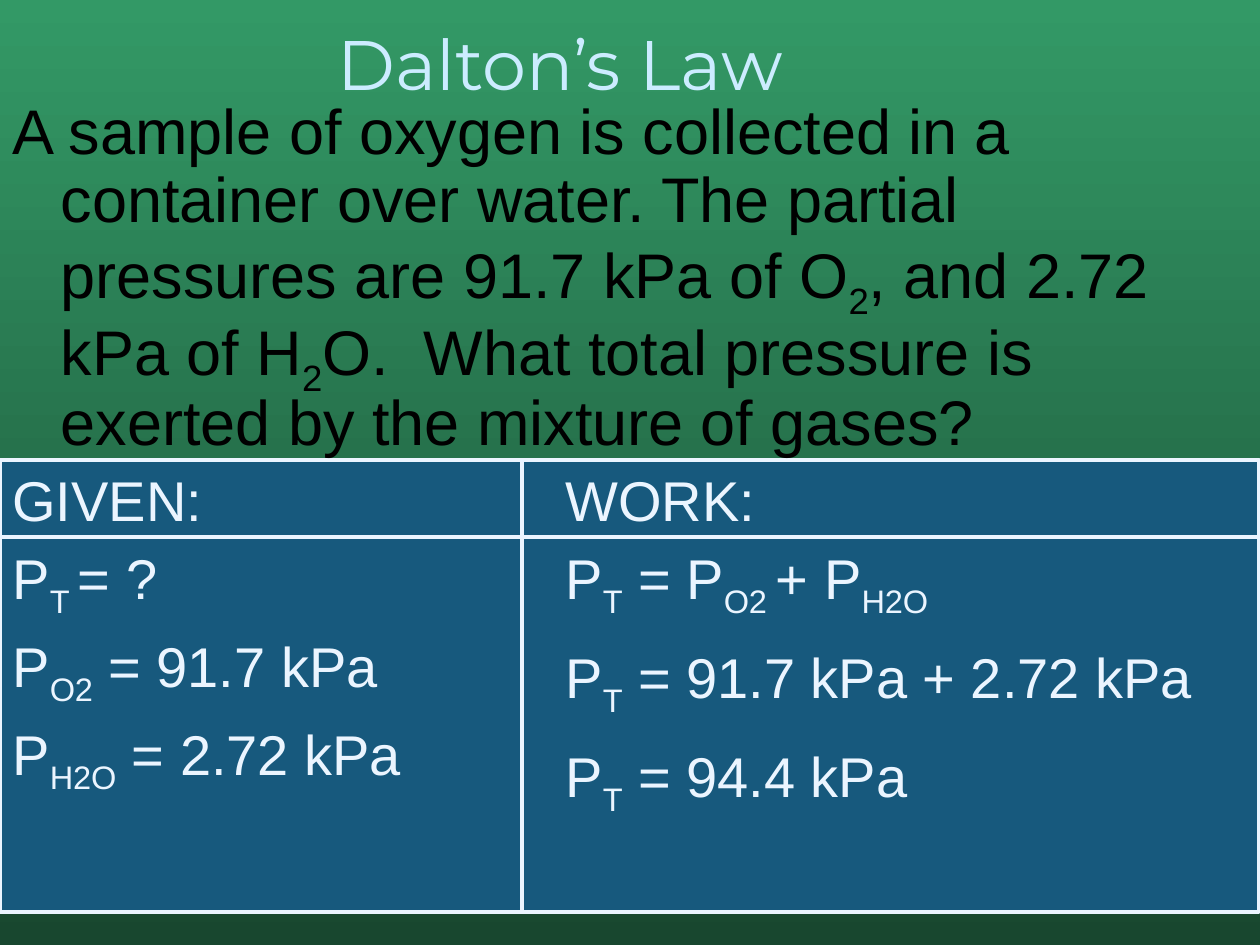
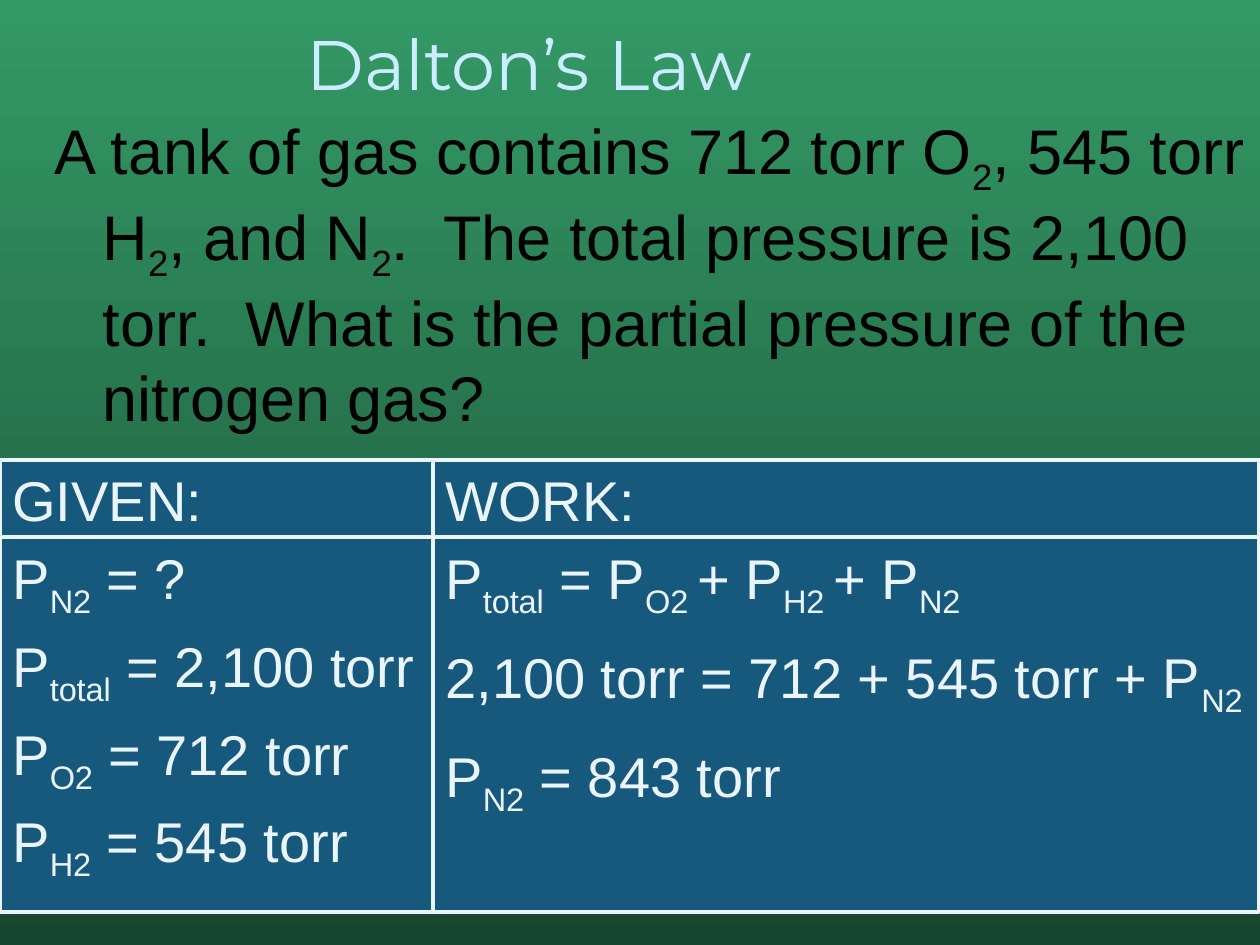
from dataclasses import dataclass

from lxml import etree
from pptx import Presentation
from pptx import util as u
from pptx.dml.color import RGBColor
from pptx.enum import shapes, text
from pptx.oxml import ns

PX = 914400 / 126


@dataclass(frozen=True)
class Theme:
    sky_top: str = "339966"
    sky_bottom: str = "18472F"
    panel: str = "17597D"
    ice: str = "EBF5FF"
    title: str = "CCECFF"
    question: str = "000000"
    heading_font: str = "Montserrat"
    text_font: str = "Arial"
    title_size: int = 40
    question_size: int = 36
    work_size: int = 32
    rule_width: float = 2.25


theme = Theme()


def px(*lengths):
    """Turn pixel lengths into a list of EMU."""
    return [u.Emu(round(length * PX)) for length in lengths]


def write(frame, lines, *, size, color, font=theme.text_font, before=(0,),
          spacing=None, hanging=0, anchor=text.MSO_ANCHOR.TOP):
    """Fill a frame; every second part between bars is a subscript.

    The last percentage in before holds for all remaining lines.
    """
    frame.word_wrap = True
    frame.auto_size = text.MSO_AUTO_SIZE.NONE
    frame.vertical_anchor = anchor
    for index, line in enumerate(lines):
        paragraph = frame.add_paragraph() if index else frame.paragraphs[0]
        paragraph.alignment = text.PP_ALIGN.LEFT
        if spacing:
            paragraph.line_spacing = spacing
        properties = paragraph._p.get_or_add_pPr()
        indent, = px(hanging)
        properties.set("marL", str(indent))
        properties.set("indent", str(-indent))
        space = etree.SubElement(properties, ns.qn("a:spcBef"))
        percent = before[min(index, len(before) - 1)]
        etree.SubElement(space, ns.qn("a:spcPct")).set("val", str(percent * 1000))
        etree.SubElement(properties, ns.qn("a:buNone"))
        for part_index, part in enumerate(line.split("|")):
            if not part:
                continue
            run = paragraph.add_run()
            run.text = part
            run.font.name = font
            run.font.size = u.Pt(size)
            run.font.color.rgb = RGBColor.from_string(color)
            if part_index % 2:
                run.font._element.set("baseline", "-25000")


problems = [
    {
        "title_left": 325,
        "question_box": (0, 94, 1239, 336),
        "question_spacing": 0.9,
        "question": "A sample of oxygen is collected in a container over water. "
                    "The partial pressures are 91.7 kPa of O|2|, and 2.72 kPa of H|2|O.  "
                    "What total pressure is exerted by the mixture of gases?",
        "divider": 522,
        "work_left": 553,
        "given": ["GIVEN:", "P|T |= ?", "P|O2| = 91.7 kPa", "P|H2O| = 2.72 kPa"],
        "work": ["WORK:", "P|T| = P|O2 |+ P|H2O|", "P|T| = 91.7 kPa + 2.72 kPa",
                 "P|T| = 94.4 kPa"],
    },
    {
        "title_left": 294,
        "question_box": (42, 105, 1218, 291),
        "question_spacing": None,
        "question": "A tank of gas contains 712 torr O|2|, 545 torr H|2|, and N|2|.  "
                    "The total pressure is 2,100 torr.  "
                    "What is the partial pressure of the nitrogen gas?",
        "divider": 433,
        "work_left": 433,
        "given": ["GIVEN:", "P|N2| = ?", "P|total| = 2,100 torr", "P|O2| = 712 torr",
                  "P|H2| = 545 torr"],
        "work": ["WORK:", "P|total| = P|O2 |+ P|H2 |+ P|N2|",
                 "2,100 torr = 712 + 545 torr + P|N2|", "P|N2| = 843 torr"],
    },
]

SLIDE_WIDTH, SLIDE_HEIGHT = 1260, 945
PANEL_TOP, PANEL_BOTTOM, HEADER_BOTTOM = 460, 912, 537
TEXT_TOP = 459

presentation = Presentation()
presentation.slide_width, presentation.slide_height = px(SLIDE_WIDTH, SLIDE_HEIGHT)

sky = presentation.slide_master.background.fill
sky.gradient()
sky.gradient_angle = 270
for stop, position, color in zip(sky.gradient_stops, (0, 1),
                                 (theme.sky_top, theme.sky_bottom)):
    stop.position = position
    stop.color.rgb = RGBColor.from_string(color)

for problem in problems:
    slide = presentation.slides.add_slide(presentation.slide_layouts[1])

    panel = slide.shapes.add_shape(
        shapes.MSO_SHAPE.RECTANGLE,
        *px(0, PANEL_TOP, SLIDE_WIDTH - 1, PANEL_BOTTOM - PANEL_TOP))
    panel.shadow.inherit = False
    panel.fill.solid()
    panel.fill.fore_color.rgb = RGBColor.from_string(theme.panel)
    panel.line.color.rgb = RGBColor.from_string(theme.ice)
    panel.line.width = u.Pt(theme.rule_width)

    columns = [
        (problem["given"], (0, TEXT_TOP, 520, 486), (20,)),
        (problem["work"], (problem["work_left"], TEXT_TOP,
                           SLIDE_WIDTH - problem["work_left"], 459), (20, 20, 40)),
    ]
    for lines, box, before in columns:
        column = slide.shapes.add_textbox(*px(*box))
        write(column.text_frame, lines, size=theme.work_size, color=theme.ice,
              before=before)

    title = slide.shapes.title
    title.left, title.top, title.width, title.height = px(problem["title_left"], 0, 998, 126)
    write(title.text_frame, ["Dalton’s Law"], size=theme.title_size, color=theme.title,
          font=theme.heading_font, anchor=text.MSO_ANCHOR.MIDDLE)

    question = slide.placeholders[1]
    question.left, question.top, question.width, question.height = px(*problem["question_box"])
    write(question.text_frame, [problem["question"]], size=theme.question_size,
          color=theme.question, before=(100,), spacing=problem["question_spacing"],
          hanging=48)
    # Descenders of the question lie over the panel's edge
    slide.shapes._spTree.append(question._element)

    rules = [
        (problem["divider"], PANEL_TOP, problem["divider"], PANEL_BOTTOM),
        (0, HEADER_BOTTOM, SLIDE_WIDTH, HEADER_BOTTOM),
    ]
    for ends in rules:
        rule = slide.shapes.add_connector(shapes.MSO_CONNECTOR.STRAIGHT, *px(*ends))
        rule.line.color.rgb = RGBColor.from_string(theme.ice)
        rule.line.width = u.Pt(theme.rule_width)
        etree.SubElement(rule._element.spPr, ns.qn("a:effectLst"))

presentation.save("out.pptx")
